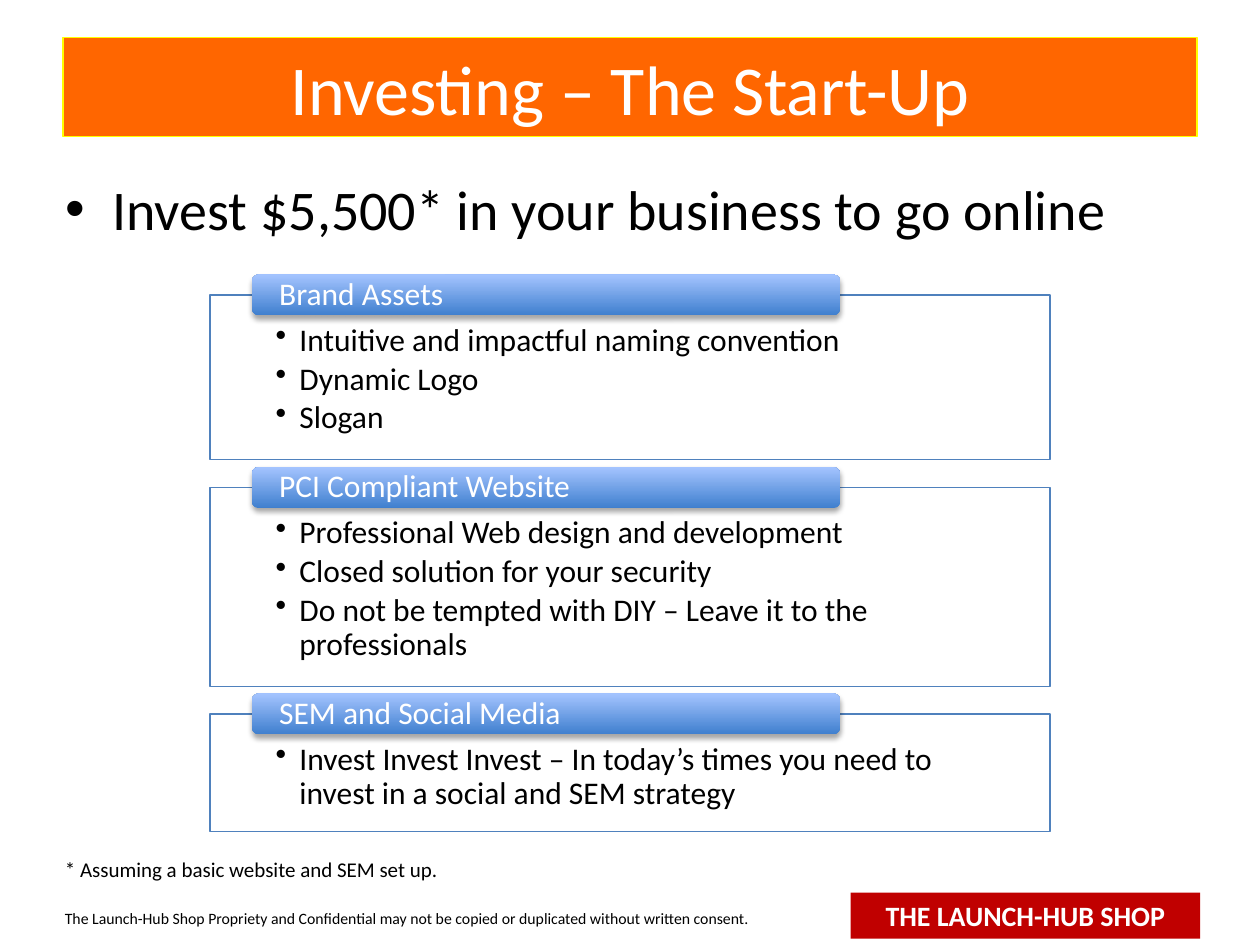
from lxml import etree
from pptx import Presentation
from pptx.dml.color import RGBColor
from pptx.enum.shapes import MSO_SHAPE
from pptx.enum.text import MSO_ANCHOR, PP_ALIGN
from pptx.oxml.ns import qn
from pptx.util import Inches, Pt

RECTANGLE, ROUNDED = MSO_SHAPE.RECTANGLE, MSO_SHAPE.ROUNDED_RECTANGLE
TOP, MIDDLE = MSO_ANCHOR.TOP, MSO_ANCHOR.MIDDLE
LEFT, CENTER = PP_ALIGN.LEFT, PP_ALIGN.CENTER

FONT = "Calibri"
COLORS = {
    "orange": "FF6600", "yellow": "FFFF00", "white": "FFFFFF", "black": "000000",
    "border": "4F81BD", "tab_bottom": "3F7FCE", "tab_top": "A4C4FF", "red": "C00000",
}
COLUMNS, ROWS = 120, 90  # grid over the whole slide

# Heading, box height in rows, bullets
SECTIONS = [
    ("Brand Assets", 15.7,
     ["Intuitive and impactful naming convention", "Dynamic Logo", "Slogan"]),
    ("PCI Compliant Website", 18.9,
     ["Professional Web design and development",
      "Closed solution for your security",
      "Do not be tempted with DIY – Leave it to the professionals"]),
    ("SEM and Social Media", 11.2,
     ["Invest Invest Invest – In today’s times you need to "
      "invest in a social and SEM strategy"]),
]
FIRST_BOX_ROW, BOX_GAP = 28.1, 2.65
TAB_HEIGHT, TAB_RISE = 3.9, 1.95


def color(name):
    return RGBColor.from_string(COLORS[name])


def write(shape, text, size=18, ink="black", bold=False, align=LEFT, anchor=TOP,
          insets=None, spacing=None, after=None, bullet_indent=None):
    """Fill a shape with one paragraph per line of text."""
    frame = shape.text_frame
    frame.word_wrap = True
    frame.vertical_anchor = anchor
    if insets:
        (frame.margin_left, frame.margin_top,
         frame.margin_right, frame.margin_bottom) = map(Inches, insets)
    frame.text = text
    for paragraph in frame.paragraphs:
        paragraph.alignment = align
        paragraph.line_spacing = spacing
        if after is not None:
            paragraph.space_after = Pt(after)
        font = paragraph.font
        for target in (font, *(run.font for run in paragraph.runs)):
            target.name, target.size, target.bold = FONT, Pt(size), bold
            target.color.rgb = color(ink)
        if bullet_indent:
            properties = paragraph._p.get_or_add_pPr()
            properties.set("marL", str(Inches(bullet_indent)))
            properties.set("indent", str(-Inches(bullet_indent)))
            bullet = etree.Element(qn("a:buChar"), char="•")
            properties.find(qn("a:defRPr")).addprevious(bullet)


class SlideBuilder:
    def __init__(self, presentation):
        self.width = presentation.slide_width
        self.height = presentation.slide_height
        self.slide = presentation.slides.add_slide(presentation.slide_layouts[1])

    def area(self, column, row, columns, rows):
        across, down = self.width / COLUMNS, self.height / ROWS
        return (round(column * across), round(row * down),
                round(columns * across), round(rows * down))

    def paint(self, shape, fill, line=None):
        shape.fill.solid()
        shape.fill.fore_color.rgb = color(fill)
        if line:
            shape.line.color.rgb = color(line)
            shape.line.width = Pt(0.75)
        else:
            shape.line.fill.background()

    def placeholder(self, index, area, text, **style):
        shape = self.slide.placeholders[index]
        shape.left, shape.top, shape.width, shape.height = self.area(*area)
        write(shape, text, **style)
        return shape

    def label(self, area, text, **style):
        write(self.slide.shapes.add_textbox(*self.area(*area)), text, **style)

    def box(self, area, text, fill, line=None, **style):
        shape = self.slide.shapes.add_shape(RECTANGLE, *self.area(*area))
        shape.shadow.inherit = False
        self.paint(shape, fill, line)
        write(shape, text, **style)

    def tab(self, area, text):
        shape = self.slide.shapes.add_shape(ROUNDED, *self.area(*area))
        shape.line.fill.background()
        shape.fill.gradient()
        shape.fill.gradient_angle = 90
        for stop, name in zip(shape.fill.gradient_stops, ("tab_bottom", "tab_top")):
            stop.color.rgb = color(name)
        # Soft shadow below the tab
        shape.shadow.inherit = False
        effects = shape._element.spPr.find(qn("a:effectLst"))
        shadow = etree.SubElement(
            effects, qn("a:outerShdw"), blurRad=str(Pt(3.1)), dist=str(Pt(1.8)),
            dir="5400000", rotWithShape="0")
        shade = etree.SubElement(shadow, qn("a:srgbClr"), val=COLORS["black"])
        etree.SubElement(shade, qn("a:alpha"), val="35000")
        write(shape, text, ink="white", anchor=MIDDLE, spacing=0.9,
              insets=(0.2, 0, 0.2, 0))

    def section(self, row, heading, rows, bullets):
        self.box((20, row, 80, rows), "\n".join(bullets), "white", "border",
                 insets=(0.52, 0.23, 0.52, 0.14), spacing=0.9, after=2.7,
                 bullet_indent=0.19)
        self.tab((24, row - TAB_RISE, 56, TAB_HEIGHT), heading)


def main():
    presentation = Presentation()
    presentation.slide_width, presentation.slide_height = Inches(10), Inches(7.5)
    builder = SlideBuilder(presentation)

    # Title and lead line
    title = builder.placeholder(0, (6, 3.6, 108, 9.4), "Investing – The Start-Up",
                                size=40, ink="white", align=CENTER, anchor=MIDDLE)
    builder.paint(title, "orange", "yellow")
    builder.placeholder(1, (5, 16, 108, 9),
                        "Invest $5,500* in your business to go online", size=32)

    # Stacked sections
    row = FIRST_BOX_ROW
    for heading, rows, bullets in SECTIONS:
        builder.section(row, heading, rows, bullets)
        row += rows + BOX_GAP

    # Footnote, notice and name plate
    builder.label((5, 81, 70, 3.6), "* Assuming a basic website and SEM set up.", size=12)
    builder.label((5, 86, 83, 3), "The Launch-Hub Shop Propriety and Confidential may not be "
                  "copied or duplicated without written consent.", size=9)
    builder.box((81, 85, 33.3, 4.4), "THE LAUNCH-HUB SHOP", "red", size=16,
                ink="white", bold=True, align=CENTER, anchor=MIDDLE)

    presentation.save("out.pptx")


if __name__ == "__main__":
    main()
